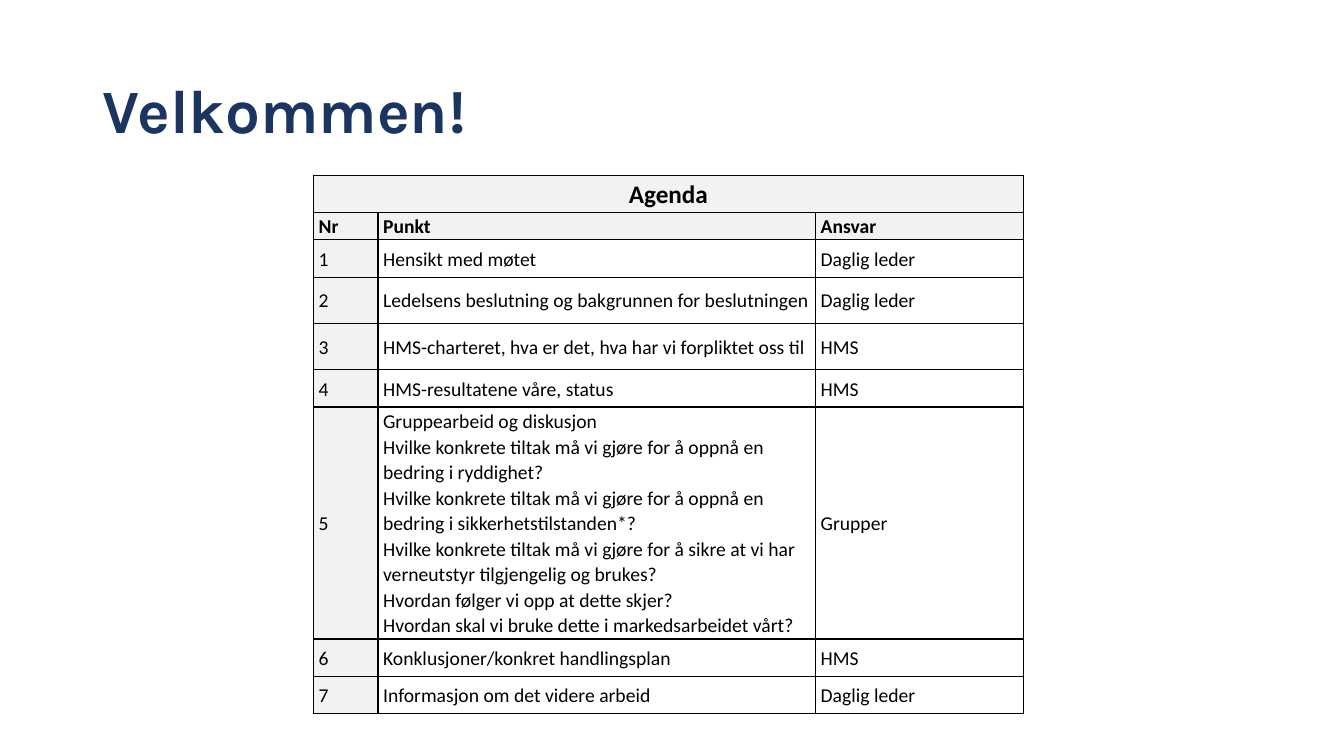
from lxml.etree import SubElement
from pptx import Presentation
from pptx.dml.color import RGBColor
from pptx.enum.text import MSO_ANCHOR as Anchor, PP_ALIGN as Align
from pptx.oxml.ns import qn
from pptx.util import Inches, Pt

NAVY, BLACK, GREY = "1B3561", "000000", "F2F2F2"
COLUMN_WIDTHS = [0.64, 4.34, 2.06]
ROW_HEIGHTS = [0.37, 0.27, 0.37, 0.46, 0.46, 0.37, 2.3, 0.37, 0.37]
GROUP_WORK = [
    "Gruppearbeid og diskusjon",
    "Hvilke konkrete tiltak må vi gjøre for å oppnå en bedring i ryddighet?",
    "Hvilke konkrete tiltak må vi gjøre for å oppnå en bedring i sikkerhetstilstanden*?",
    "Hvilke konkrete tiltak må vi gjøre for å sikre at vi har verneutstyr tilgjengelig og brukes?",
    "Hvordan følger vi opp at dette skjer?",
    "Hvordan skal vi bruke dette i markedsarbeidet vårt?",
]
AGENDA = [
    (["Hensikt med møtet"], "Daglig leder"),
    (["Ledelsens beslutning og bakgrunnen for beslutningen"], "Daglig leder"),
    (["HMS-charteret, hva er det, hva har vi forpliktet oss til"], "HMS"),
    (["HMS-resultatene våre, status"], "HMS"),
    (GROUP_WORK, "Grupper"),
    (["Konklusjoner/konkret handlingsplan"], "HMS"),
    (["Informasjon om det videre arbeid"], "Daglig leder"),
]


def color(value):
    """Turn a hex string into a colour."""
    return RGBColor.from_string(value)


def write(frame, lines, font, size, ink, bold=False, align=Align.LEFT, spacing=1.07):
    """Fill a text frame with one formatted paragraph per line."""
    for index, line in enumerate(lines):
        para = frame.paragraphs[0] if index == 0 else frame.add_paragraph()
        para.alignment = align
        para.line_spacing = spacing
        para.space_before = para.space_after = Pt(0)
        span = para.add_run()
        span.text = line
        span.font.name = font
        span.font.size = Pt(size)
        span.font.bold = bold
        span.font.color.rgb = color(ink)


def add_borders(cell):
    """Draw a thin black line on each side of a cell."""
    properties = cell._tc.get_or_add_tcPr()
    for side in ("a:lnL", "a:lnR", "a:lnT", "a:lnB"):
        line = SubElement(properties, qn(side), w=str(Pt(1)))
        fill = SubElement(line, qn("a:solidFill"))
        SubElement(fill, qn("a:srgbClr"), val=BLACK)


def format_cell(cell, shaded):
    """Set borders, margins, anchor and fill of a cell."""
    add_borders(cell)
    cell.margin_left = cell.margin_right = Inches(0.05)
    cell.margin_top = cell.margin_bottom = 0
    cell.vertical_anchor = Anchor.MIDDLE
    if shaded:
        cell.fill.solid()
        cell.fill.fore_color.rgb = color(GREY)
    else:
        cell.fill.background()


def add_title(page, text):
    """Place and write the slide title."""
    title = page.shapes.title
    title.left, title.top = Inches(0.92), Inches(0.4)
    title.width, title.height = Inches(11.5), Inches(1.45)
    title.text_frame.vertical_anchor = Anchor.MIDDLE
    write(title.text_frame, [text], "Karla", 44, NAVY, bold=True, spacing=0.9)


def add_agenda(page):
    """Build the agenda table with its heading rows."""
    table = page.shapes.add_table(
        len(ROW_HEIGHTS), len(COLUMN_WIDTHS), Inches(3.11), Inches(1.74),
        Inches(sum(COLUMN_WIDTHS)), Inches(sum(ROW_HEIGHTS))).table
    table.first_row = table.horz_banding = False
    for column, width in zip(table.columns, COLUMN_WIDTHS):
        column.width = Inches(width)
    for row, height in zip(table.rows, ROW_HEIGHTS):
        row.height = Inches(height)

    rows = [[["Agenda"], [], []], [["Nr"], ["Punkt"], ["Ansvar"]]]
    rows += [[[str(number)], topic, [owner]]
             for number, (topic, owner) in enumerate(AGENDA, 1)]
    for row_index, row in enumerate(rows):
        for column_index, lines in enumerate(row):
            cell = table.cell(row_index, column_index)
            format_cell(cell, shaded=row_index < 2 or column_index == 0)
            write(cell.text_frame, lines, "Calibri", 18 if row_index == 0 else 14, BLACK,
                  bold=row_index < 2,
                  align=Align.CENTER if row_index == 0 else Align.LEFT)
    table.cell(0, 0).merge(table.cell(0, 2))


def main():
    """Create the welcome slide and save it."""
    deck = Presentation()
    deck.slide_width, deck.slide_height = Inches(13.33), Inches(7.5)
    page = deck.slides.add_slide(deck.slide_layouts[5])
    add_title(page, "Velkommen!")
    add_agenda(page)
    deck.save("out.pptx")


if __name__ == "__main__":
    main()
